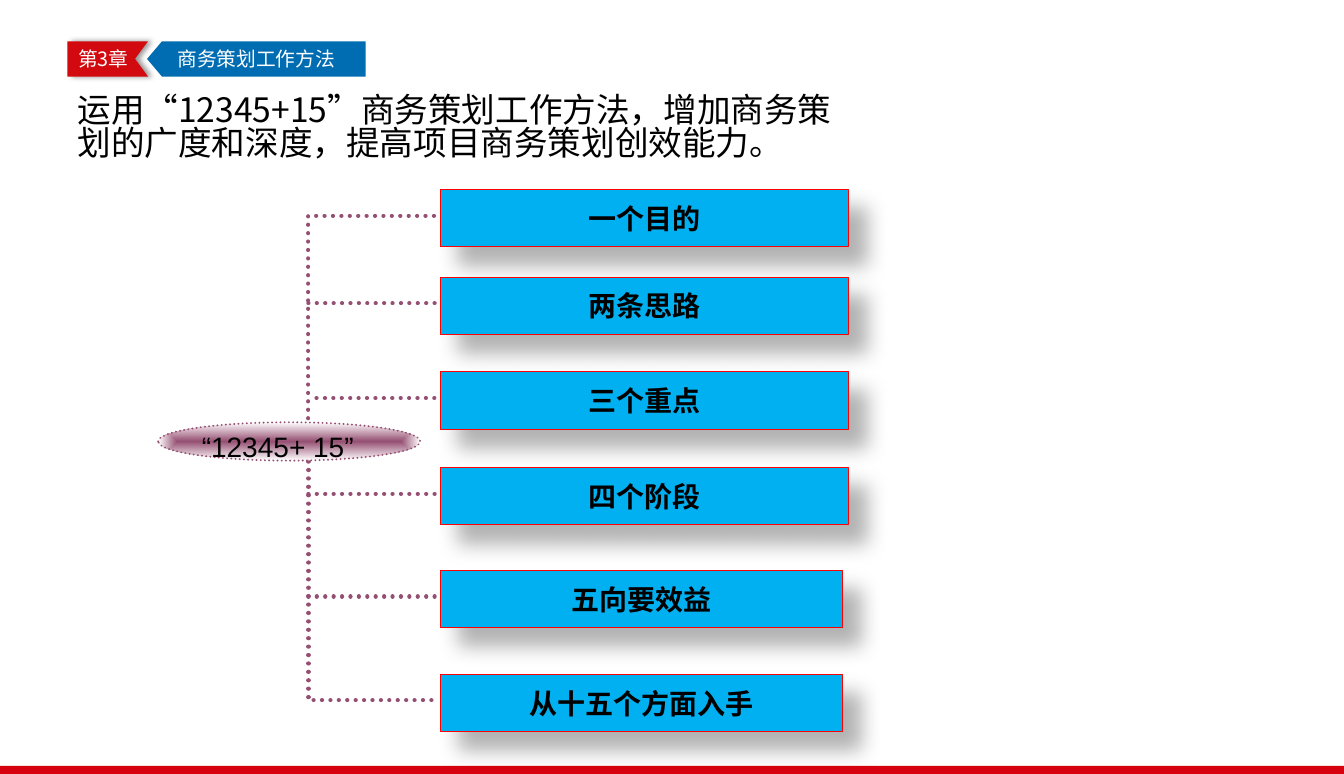
import pptx
import pptx.dml.color
import pptx.enum.dml
import pptx.enum.shapes
import pptx.enum.text
import pptx.oxml.ns
import pptx.util
from lxml import etree

Pt = pptx.util.Pt
qn = pptx.oxml.ns.qn
SHAPES = pptx.enum.shapes.MSO_SHAPE
ANCHOR = pptx.enum.text.MSO_ANCHOR
ALIGN = pptx.enum.text.PP_ALIGN
CJK = "Noto Sans CJK SC"
COLOURS = {
    "band": "D7000F", "chapter": "D20A10", "section": "006CB1",
    "plum": "954F72", "sky": "00B0F0", "red": "FF0000",
    "white": "FFFFFF", "black": "000000",
}
RGB = pptx.dml.color.RGBColor.from_string


def write(shape, text, size, colour, align, anchor, insets, font=CJK, bold=False):
    frame = shape.text_frame
    frame.auto_size = pptx.enum.text.MSO_AUTO_SIZE.NONE
    frame.word_wrap = True
    frame.vertical_anchor = anchor
    frame.margin_left, frame.margin_top, frame.margin_right, frame.margin_bottom = map(Pt, insets)
    para = frame.paragraphs[0]
    para.text = text
    para.alignment = align
    para.font.size = Pt(size)
    para.font.name = font
    para.font.bold = bold
    para.font.color.rgb = RGB(COLOURS[colour])
    etree.SubElement(para._p.pPr.find(qn("a:defRPr")), qn("a:ea"), typeface=font)
    return para


def style(shape, fill=None, line=None, width=0, dotted=False, shadow=None):
    if fill:
        shape.fill.solid()
        shape.fill.fore_color.rgb = RGB(COLOURS[fill])
    if line:
        shape.line.color.rgb = RGB(COLOURS[line])
        shape.line.width = Pt(width)
    else:
        shape.line.fill.background()
    properties = shape._element.spPr
    if dotted:
        shape.line.dash_style = pptx.enum.dml.MSO_LINE.ROUND_DOT
        properties.find(qn("a:ln")).set("cap", "rnd")
    effects = etree.SubElement(properties, qn("a:effectLst"))
    if shadow:
        opacity, blur, distance, angle = shadow
        outer = etree.SubElement(
            effects, qn("a:outerShdw"), blurRad=str(Pt(blur)), dist=str(Pt(distance)),
            dir=str(angle * 60000), algn="tl", rotWithShape="0")
        colour = etree.SubElement(outer, qn("a:srgbClr"), val=COLOURS["black"])
        etree.SubElement(colour, qn("a:alpha"), val=str(opacity * 1000))


deck = pptx.Presentation()
deck.slide_width, deck.slide_height = Pt(960), Pt(553)
page = deck.slides.add_slide(deck.slide_layouts[5])
shapes = page.shapes

title = shapes.title
title.left, title.top, title.width, title.height = Pt(48.2), Pt(64.8), Pt(558.7), Pt(70.6)
para = write(title, "运用“12345+15”商务策划工作方法，增加商务策划的广度和深度，提高项目商务策划创效能力。",
             24, "black", ALIGN.LEFT, ANCHOR.TOP, (7.2, 3.6, 7.2, 3.6))
para.line_spacing = 0.82

band = shapes.add_shape(SHAPES.RECTANGLE, Pt(0), Pt(547.2), Pt(960), Pt(5.8))
style(band, "band")

outline = shapes.build_freeform(Pt(48.2), Pt(29.5))
outline.add_line_segments([(Pt(x), Pt(y)) for x, y in [(105.8, 29.5), (96.5, 42), (105.8, 54.7), (48.2, 54.7)]])
chapter = outline.convert_to_shape()
style(chapter, "chapter", shadow=(40, 4, 3, 0))
write(chapter, "第3章", 14.1, "white", ALIGN.CENTER, ANCHOR.MIDDLE, (0, 0, 6.5, 0))

section = shapes.add_shape(SHAPES.PENTAGON, Pt(105.1), Pt(29.5), Pt(156.2), Pt(25.2))
section.adjustments[0] = 0.421
section._element.spPr.find(qn("a:xfrm")).set("flipH", "1")
style(section, "section")
write(section, "商务策划工作方法", 14.1, "white", ALIGN.LEFT, ANCHOR.MIDDLE, (16.5, 0, 4.3, 0))

steps = [
    ("一个目的", 135.4, 291.6), ("两条思路", 198, 291.6), ("三个重点", 265.7, 291.6),
    ("四个阶段", 334.1, 291.6), ("五向要效益", 407.5, 287.3), ("从十五个方面入手", 481.7, 287.3),
]
trunk, drop = 220.3, 18.7
branches = [top + drop for _, top, _ in steps]

for start, end, tip in [(298.8, branches[0], 311), (329.8, branches[-1], 312.5)]:
    outline = shapes.build_freeform(Pt(trunk), Pt(start))
    outline.add_line_segments([(Pt(trunk), Pt(end)), (Pt(tip), Pt(end))], close=False)
    bracket = outline.convert_to_shape()
    bracket.fill.background()
    style(bracket, line="plum", width=3, dotted=True)

for y, shift in zip(branches[1:-1], [0, 5.8, 0, 0]):
    branch = shapes.add_connector(pptx.enum.shapes.MSO_CONNECTOR.STRAIGHT,
                                  Pt(trunk + shift), Pt(y), Pt(311.8 + shift), Pt(y))
    style(branch, line="plum", width=3, dotted=True)

oval = shapes.add_shape(SHAPES.OVAL, Pt(113), Pt(301.7), Pt(187.2), Pt(27.4))
oval.fill.gradient()
for stop, position, name in zip(oval.fill.gradient_stops, (0, 1), ("plum", "white")):
    stop.position = position
    stop.color.rgb = RGB(COLOURS[name])
gradient = oval._element.spPr.find(qn("a:gradFill"))
gradient.remove(gradient.find(qn("a:lin")))
focus = etree.SubElement(gradient, qn("a:path"), path="shape")
etree.SubElement(focus, qn("a:fillToRect"), l="50000", t="50000", r="50000", b="50000")
style(oval, line="plum", width=1.5, dotted=True)

label = shapes.add_textbox(Pt(135.4), Pt(303.1), Pt(126), Pt(31))
write(label, "“12345+ 15”", 20, "black", ALIGN.CENTER, ANCHOR.TOP, (7.2, 3.6, 7.2, 3.6), "Arial")

for text, top, width in steps:
    step = shapes.add_shape(SHAPES.RECTANGLE, Pt(314.6), Pt(top), Pt(width), Pt(41))
    style(step, "sky", "red", 0.75, shadow=(30, 15, 18, 45))
    write(step, text, 20, "black", ALIGN.CENTER, ANCHOR.MIDDLE, (7.2, 3.6, 7.2, 3.6), bold=True)
    step.text_frame.word_wrap = False

deck.save("out.pptx")
